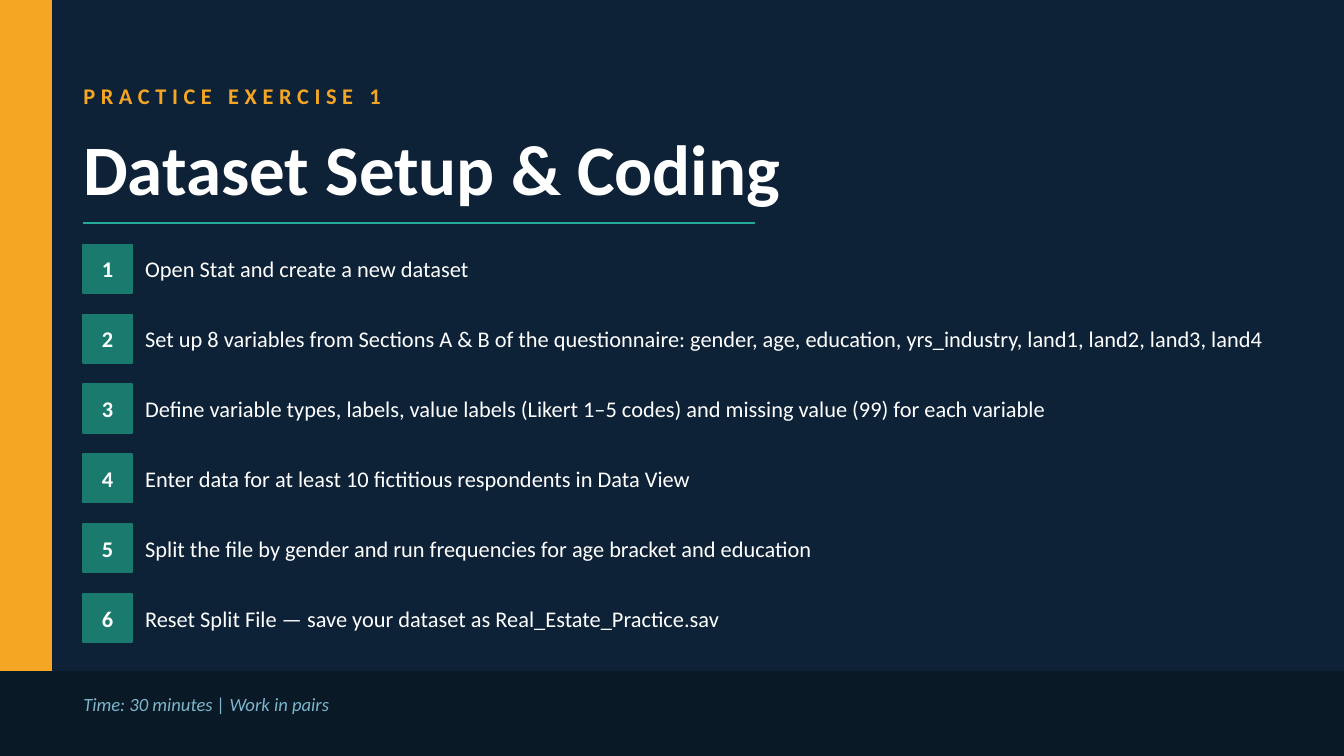
"""Build the practice exercise slide with its six numbered steps."""
from lxml.etree import SubElement
from pptx import Presentation
from pptx.dml.color import RGBColor
from pptx.enum.shapes import MSO_CONNECTOR, MSO_SHAPE
from pptx.enum.text import MSO_ANCHOR, PP_ALIGN
from pptx.oxml.ns import qn
from pptx.util import Pt

NAVY, FOOTER, AMBER = "0D2137", "091926", "F5A623"
GREEN, TEAL, PALE_BLUE, WHITE = "1A7A6E", "25A99A", "7EB5CC", "FFFFFF"
MARGIN, BADGE, PITCH = 44.64, 25.92, 37.44
FIRST_BADGE_TOP = 131.04
STEP_LEFT, STEP_WIDTH, STEP_HEIGHT = 77.76, 617.76, 31.68
STEPS = [
    "Open Stat and create a new dataset",
    "Set up 8 variables from Sections A & B of the questionnaire: "
    "gender, age, education, yrs_industry, land1, land2, land3, land4",
    "Define variable types, labels, value labels (Likert 1–5 codes) "
    "and missing value (99) for each variable",
    "Enter data for at least 10 fictitious respondents in Data View",
    "Split the file by gender and run frequencies for age bracket and education",
    "Reset Split File — save your dataset as Real_Estate_Practice.sav",
]

color = RGBColor.from_string


def add_text(page, text, left, top, width, height, *, size=12, fill=WHITE,
             bold=False, italic=False, align=PP_ALIGN.LEFT, spacing=0):
    box = page.shapes.add_textbox(Pt(left), Pt(top), Pt(width), Pt(height))
    frame = box.text_frame
    frame.word_wrap = True
    frame.vertical_anchor = MSO_ANCHOR.MIDDLE
    frame.margin_left = frame.margin_right = 0
    frame.margin_top = frame.margin_bottom = 0
    para = frame.paragraphs[0]
    para.alignment = align
    span = para.add_run()
    span.text = text
    span.font.name = "Calibri"
    span.font.size = Pt(size)
    span.font.bold = bold
    span.font.italic = italic
    span.font.color.rgb = color(fill)
    if spacing:
        span.font._element.set("spc", str(spacing * 100))


def add_block(page, left, top, width, height, fill):
    block = page.shapes.add_shape(
        MSO_SHAPE.RECTANGLE, Pt(left), Pt(top), Pt(width), Pt(height))
    block.shadow.inherit = False
    block.fill.solid()
    block.fill.fore_color.rgb = color(fill)
    block.line.color.rgb = color(fill)
    block.line.width = Pt(1)


deck = Presentation()
deck.slide_width, deck.slide_height = Pt(720), Pt(405)
page = deck.slides.add_slide(deck.slide_layouts[6])
page.background.fill.solid()
page.background.fill.fore_color.rgb = color(NAVY)

add_block(page, 0, 0, 27.36, 405, AMBER)
add_block(page, 0, 360, 720, 45, FOOTER)
add_text(page, "PRACTICE EXERCISE 1", MARGIN, 36, 612, 30.24,
         fill=AMBER, bold=True, spacing=3)
add_text(page, "Dataset Setup & Coding", MARGIN, 64.8, 612, 48.96,
         size=38, bold=True)

rule = page.shapes.add_connector(
    MSO_CONNECTOR.STRAIGHT, Pt(MARGIN), Pt(119.52), Pt(MARGIN + 360), Pt(119.52))
rule.line.color.rgb = color(TEAL)
rule.line.width = Pt(1)
SubElement(rule._element.spPr, qn("a:effectLst"))

for number, step in enumerate(STEPS, start=1):
    top = FIRST_BADGE_TOP + (number - 1) * PITCH
    add_block(page, MARGIN, top, BADGE, BADGE, GREEN)
    add_text(page, str(number), MARGIN, top, BADGE, BADGE,
             bold=True, align=PP_ALIGN.CENTER)
    add_text(page, step, STEP_LEFT, top - (STEP_HEIGHT - BADGE) / 2,
             STEP_WIDTH, STEP_HEIGHT)

add_text(page, "Time: 30 minutes | Work in pairs", MARGIN, 367.2, 612, 20.16,
         size=10, fill=PALE_BLUE, italic=True)

deck.save("out.pptx")
